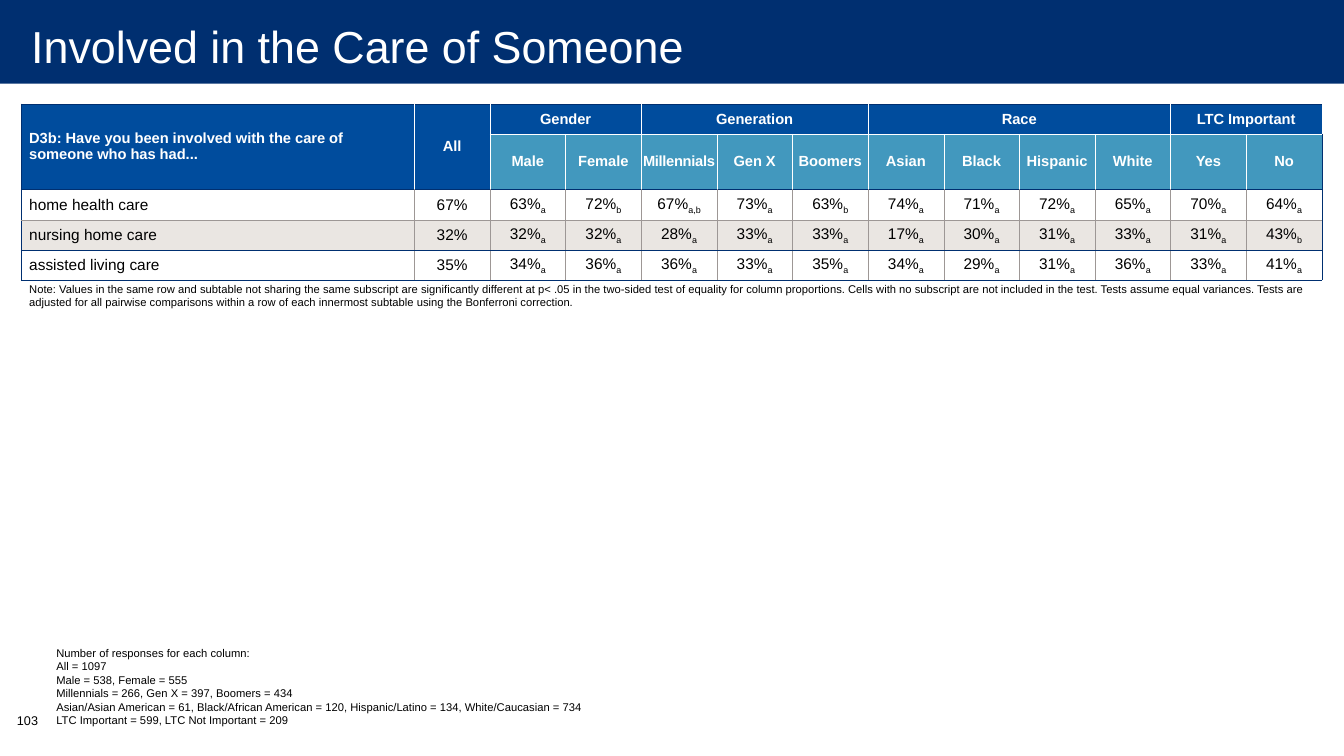
from lxml.etree import SubElement
from pptx import Presentation
from pptx.dml.color import RGBColor
from pptx.enum.shapes import MSO_SHAPE
from pptx.enum.text import MSO_ANCHOR, PP_ALIGN
from pptx.oxml.ns import qn
from pptx.util import Inches, Pt

TITLE = "Involved in the Care of Someone"
PAGE_NUMBER = "103"
QUESTION = "D3b: Have you been involved with the care of someone who has had..."
GROUPS = [
    ("Gender", ["Male", "Female"]),
    ("Generation", ["Millennials", "Gen X", "Boomers"]),
    ("Race", ["Asian", "Black", "Hispanic", "White"]),
    ("LTC Important", ["Yes", "No"]),
]
CARE_ROWS = [
    ("home health care", "67%", "63%a 72%b 67%a,b 73%a 63%b 74%a 71%a 72%a 65%a 70%a 64%a"),
    ("nursing home care", "32%", "32%a 32%a 28%a 33%a 33%a 17%a 30%a 31%a 33%a 31%a 43%b"),
    ("assisted living care", "35%", "34%a 36%a 36%a 33%a 35%a 34%a 29%a 31%a 36%a 33%a 41%a"),
]
NOTE = (
    "Note: Values in the same row and subtable not sharing the same subscript are significantly "
    "different at p< .05 in the two-sided test of equality for column proportions. Cells with no "
    "subscript are not included in the test. Tests assume equal variances. Tests are adjusted for "
    "all pairwise comparisons within a row of each innermost subtable using the Bonferroni correction."
)
RESPONSES = [
    "Number of responses for each column:",
    "All = 1097",
    "Male = 538, Female = 555",
    "Millennials = 266, Gen X = 397, Boomers = 434",
    "Asian/Asian American = 61, Black/African American = 120, Hispanic/Latino = 134, White/Caucasian = 734",
    "LTC Important = 599, LTC Not Important = 209",
]
COLORS = {
    "navy": "002F70", "blue": "004C9D", "sky": "4298BE", "sand": "EAE6E2",
    "gray": "9D9795", "white": "FFFFFF", "black": "000000",
}
FONT = "Arial"
SLIDE_WIDTH, SLIDE_HEIGHT = 13.33, 7.5
TABLE_LEFT, TABLE_TOP = 0.21, 1.03
COLUMN_WIDTHS = [3.9] + [0.75] * 12
ROW_HEIGHTS = [0.3, 0.53, 0.3, 0.3, 0.3, 0.3]
LAST_COLUMN, NOTE_ROW = len(COLUMN_WIDTHS) - 1, len(ROW_HEIGHTS) - 1
HORIZONTAL_LINES = ["navy", "white", "navy", "gray", "navy", "navy", None]
HEADER_INSETS, BODY_INSETS = (0, 0, 0, 0), (0.01, 0.01, 0.01, 0)
LABEL_INSETS = (0.08, 0.01, 0.01, 0)


def rgb(name):
    return RGBColor.from_string(COLORS[name])


def style_run(run, size, color, bold=False):
    run.font.name = FONT
    run.font.size = Pt(size)
    run.font.bold = bold
    run.font.color.rgb = rgb(color)


def set_insets(target, insets):
    target.margin_left, target.margin_top, target.margin_right, target.margin_bottom = map(Inches, insets)


def add_text(slide, box, text, size, color, anchor, insets=(0.1, 0.05, 0.1, 0.05), wrap=True):
    frame = slide.shapes.add_textbox(*map(Inches, box)).text_frame
    frame.word_wrap = wrap
    frame.vertical_anchor = anchor
    set_insets(frame, insets)
    frame.text = text
    for run in frame.paragraphs[0].runs:
        style_run(run, size, color)


def set_cell(cell, text, size, color, insets, centered=True, bold=False, subscript=""):
    set_insets(cell, insets)
    cell.vertical_anchor = MSO_ANCHOR.MIDDLE
    paragraph = cell.text_frame.paragraphs[0]
    paragraph.text = text
    paragraph.alignment = PP_ALIGN.CENTER if centered else PP_ALIGN.LEFT
    if subscript:
        paragraph.add_run().text = subscript
        paragraph.runs[1].font._element.set("baseline", "-25000")
    for run in paragraph.runs:
        style_run(run, size, color, bold)


def vertical_line(row, edge):
    if row == NOTE_ROW:
        return None
    if edge in (0, LAST_COLUMN + 1):
        return "navy"
    return "white" if row < 2 else "gray"


def set_borders(cell, row, column):
    borders = [
        ("a:lnL", vertical_line(row, column)),
        ("a:lnR", vertical_line(row, column + 1)),
        ("a:lnT", HORIZONTAL_LINES[row]),
        ("a:lnB", HORIZONTAL_LINES[row + 1]),
    ]
    if row == 1 and column < 2:
        borders[2] = ("a:lnT", None)
    if row == 0 and column < 2:
        borders[3] = ("a:lnB", "navy")
    properties = cell._tc.get_or_add_tcPr()
    for position, (tag, color) in enumerate(borders):
        line = SubElement(properties, qn(tag), w=str(Pt(0.25)))
        if color:
            SubElement(SubElement(line, qn("a:solidFill")), qn("a:srgbClr"), val=COLORS[color])
        else:
            SubElement(line, qn("a:noFill"))
        properties.insert(position, line)


def cell_fill(row, column):
    if row < 2:
        return "blue" if row == 0 or column < 2 else "sky"
    return "sand" if row == 3 else None


def add_care_table(slide):
    frame = slide.shapes.add_table(
        len(ROW_HEIGHTS), len(COLUMN_WIDTHS), Inches(TABLE_LEFT), Inches(TABLE_TOP),
        Inches(sum(COLUMN_WIDTHS)), Inches(sum(ROW_HEIGHTS)))
    table = frame.table
    table.first_row = table.horz_banding = False
    table._tbl.tblPr.find(qn("a:tableStyleId")).text = "{2D5ABB26-0587-4C30-8999-92F81FD0307C}"
    for column, width in zip(table.columns, COLUMN_WIDTHS):
        column.width = Inches(width)
    for row, height in zip(table.rows, ROW_HEIGHTS):
        row.height = Inches(height)
    for row in range(len(ROW_HEIGHTS)):
        for column in range(len(COLUMN_WIDTHS)):
            cell = table.cell(row, column)
            set_insets(cell, HEADER_INSETS)
            fill = cell_fill(row, column)
            if fill:
                cell.fill.solid()
                cell.fill.fore_color.rgb = rgb(fill)
            else:
                cell.fill.background()
            set_borders(cell, row, column)

    for column in range(2):
        table.cell(0, column).merge(table.cell(1, column))
    set_cell(table.cell(0, 0), QUESTION, 10.5, "white", (0.08, 0.1, 0.05, 0.1), centered=False, bold=True)
    set_cell(table.cell(0, 1), "All", 10.5, "white", HEADER_INSETS, bold=True)
    start = 2
    for group, members in GROUPS:
        table.cell(0, start).merge(table.cell(0, start + len(members) - 1))
        set_cell(table.cell(0, start), group, 10.5, "white", HEADER_INSETS, bold=True)
        for column, member in enumerate(members, start):
            cell = table.cell(1, column)
            set_cell(cell, member, 10.5, "white", HEADER_INSETS, bold=True)
            if member == "Millennials":
                cell.text_frame.paragraphs[0].runs[0].font._element.set("spc", "-20")
        start += len(members)

    for row, (label, total, shares) in enumerate(CARE_ROWS, 2):
        set_cell(table.cell(row, 0), label, 11, "black", LABEL_INSETS, centered=False)
        for column, share in enumerate([total] + shares.split(), 1):
            value, subscript = share.split("%")
            set_cell(table.cell(row, column), value + "%", 11, "black", BODY_INSETS, subscript=subscript)

    table.cell(NOTE_ROW, 0).merge(table.cell(NOTE_ROW, LAST_COLUMN))
    set_cell(table.cell(NOTE_ROW, 0), NOTE, 8, "black", LABEL_INSETS, centered=False)


def main():
    presentation = Presentation()
    presentation.slide_width, presentation.slide_height = Inches(SLIDE_WIDTH), Inches(SLIDE_HEIGHT)
    slide = presentation.slides.add_slide(presentation.slide_layouts[6])
    band = slide.shapes.add_shape(MSO_SHAPE.RECTANGLE, 0, 0, Inches(SLIDE_WIDTH), Inches(0.83))
    band.shadow.inherit = False
    band.fill.solid()
    band.fill.fore_color.rgb = rgb("navy")
    band.line.fill.background()
    add_text(slide, (0.01, -0.03, SLIDE_WIDTH, 0.97), TITLE, 32, "white",
             MSO_ANCHOR.MIDDLE, (0.3, 0, 0.2, 0), wrap=False)
    add_text(slide, (0.46, 6.36, 5.85, 0.9), "\v".join(RESPONSES), 8, "black", MSO_ANCHOR.BOTTOM)
    add_text(slide, (0.07, 7.02, 0.49, 0.4), PAGE_NUMBER, 9, "black", MSO_ANCHOR.TOP)
    add_care_table(slide)
    presentation.save("out.pptx")


if __name__ == "__main__":
    main()
